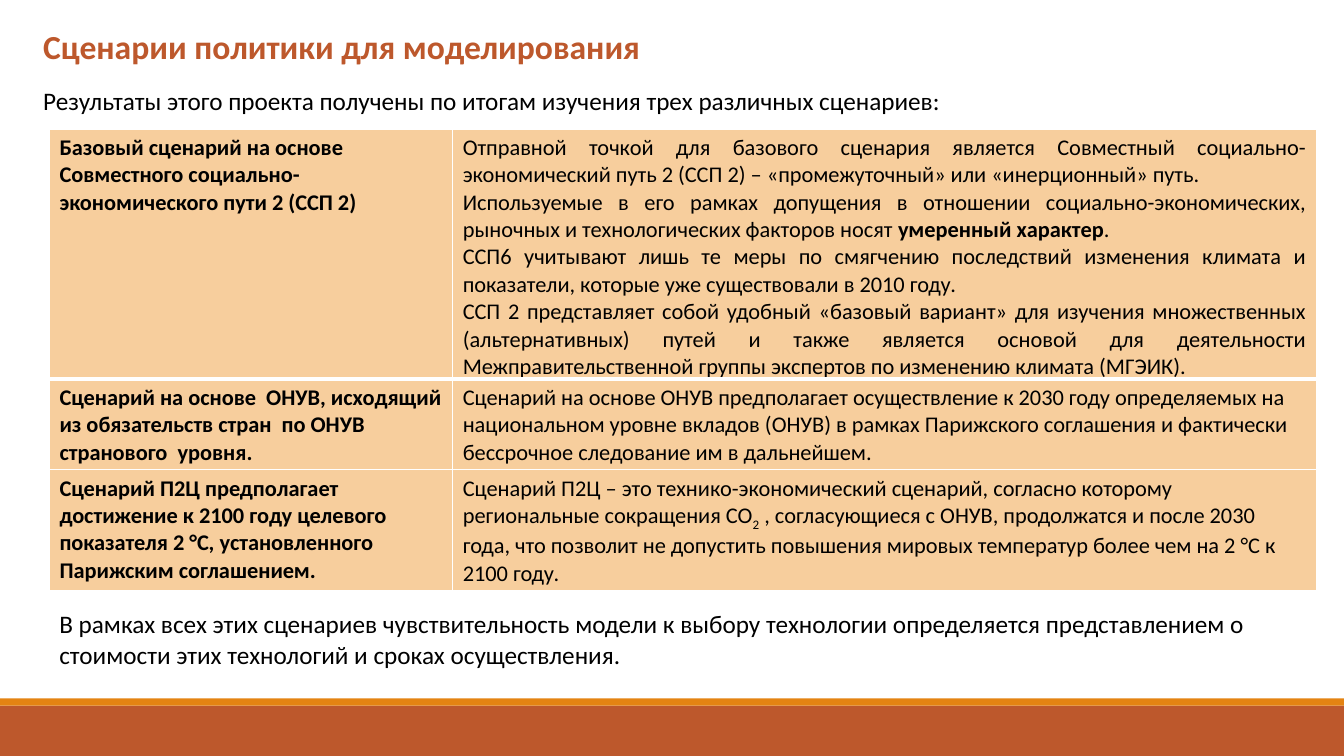
from dataclasses import dataclass

from lxml import etree
from pptx import Presentation
from pptx.dml.color import RGBColor
from pptx.enum.shapes import MSO_SHAPE as Shape
from pptx.enum.text import MSO_ANCHOR as Anchor, PP_ALIGN as Align
from pptx.oxml.ns import qn
from pptx.util import Inches, Pt


@dataclass(frozen=True)
class Theme:
    font: str = "Calibri"
    rust: str = "BD582C"
    orange: str = "E48312"
    peach: str = "F7CE9D"
    black: str = "000000"
    white: str = "FFFFFF"
    title_size: int = 24
    body_size: int = 18
    table_size: int = 16


THEME = Theme()
PLAIN, BOLD, SUBSCRIPT = "plain", "bold", "subscript"

TITLE = "Сценарии политики для моделирования"
INTRO = "Результаты этого проекта получены по итогам изучения трех различных сценариев:"
CLOSING = (
    "В рамках всех этих сценариев чувствительность модели к выбору технологии "
    "определяется представлением о стоимости этих технологий и сроках осуществления."
)

SCENARIOS = [
    (
        "Базовый сценарий на основе Совместного социально-экономического пути 2 (ССП 2)",
        [
            [("Отправной точкой для базового сценария является Совместный "
              "социально-экономический путь 2 (ССП 2) – «промежуточный» или "
              "«инерционный» путь.", PLAIN)],
            [("Используемые в его рамках допущения в отношении социально-экономических, "
              "рыночных и технологических факторов носят ", PLAIN),
             ("умеренный характер", BOLD), (".", PLAIN)],
            [("ССП6 учитывают лишь те меры по смягчению последствий изменения климата и "
              "показатели, которые уже существовали в 2010 году.", PLAIN)],
            [("ССП 2 представляет собой удобный «базовый вариант» для изучения "
              "множественных (альтернативных) путей и также является основой для "
              "деятельности Межправительственной группы экспертов по изменению климата "
              "(МГЭИК).", PLAIN)],
        ],
        {"height": 2.48, "align": Align.JUSTIFY, "margin_bottom": 0, "rule": 3},
    ),
    (
        "Сценарий на основе  ОНУВ, исходящий из обязательств стран  по ОНУВ "
        "странового  уровня.",
        [
            [("Сценарий на основе ОНУВ предполагает осуществление к 2030 году "
              "определяемых на национальном уровне вкладов (ОНУВ) в рамках Парижского "
              "соглашения и фактически бессрочное следование им в дальнейшем.", PLAIN)],
        ],
        {"height": 0.9, "align": Align.LEFT, "margin_bottom": 0.05, "rule": 1},
    ),
    (
        "Сценарий П2Ц предполагает достижение к 2100 году целевого показателя 2 °C, "
        "установленного Парижским соглашением.",
        [
            [("Сценарий П2Ц – это технико-экономический сценарий, согласно которому "
              "региональные сокращения CO", PLAIN), ("2", SUBSCRIPT),
             (" , согласующиеся с ОНУВ, продолжатся и после 2030 года, что позволит не "
              "допустить повышения мировых температур более чем на 2 °C к 2100 году.",
              PLAIN)],
        ],
        {"height": 1.19, "align": Align.LEFT, "margin_bottom": 0.05, "rule": 1},
    ),
]


def apply(target, values):
    for name, value in values.items():
        setattr(target, name, value)


def paint(fill, color):
    fill.solid()
    fill.fore_color.rgb = RGBColor.from_string(color)


def add_span(para, text, size, color=THEME.black, style=PLAIN):
    span = para.add_run()
    span.text = text
    apply(span.font, {"name": THEME.font, "size": Pt(size), "bold": style == BOLD})
    span.font.color.rgb = RGBColor.from_string(color)
    if style == SUBSCRIPT:
        span._r.get_or_add_rPr().set("baseline", "-25000")


def add_text(page, box, text, size, color=THEME.black, style=PLAIN, wrap=True):
    frame = page.shapes.add_textbox(*map(Inches, box)).text_frame
    frame.word_wrap = wrap
    add_span(frame.paragraphs[0], text, size, color, style)


def add_footer(page, box):
    left, top, width, height = box
    stripe = 0.07
    bands = [
        (top + stripe, height - stripe, THEME.rust),
        (top, stripe, THEME.orange),
    ]
    for band_top, band_height, color in bands:
        area = map(Inches, (left, band_top, width, band_height))
        band = page.shapes.add_shape(Shape.RECTANGLE, *area)
        band.shadow.inherit = False
        band.line.fill.background()
        paint(band.fill, color)


def set_borders(cell, widths):
    props = cell._tc.get_or_add_tcPr()
    for index, (side, width) in enumerate(widths.items()):
        line = etree.Element(qn(f"a:{side}"), w=str(Pt(width)))
        fill = etree.SubElement(line, qn("a:solidFill"))
        etree.SubElement(fill, qn("a:srgbClr"), val=THEME.white)
        props.insert(index, line)


def fill_cell(cell, paragraphs, align, margin_bottom, borders):
    apply(cell, {
        "vertical_anchor": Anchor.TOP,
        "margin_left": Inches(0.1),
        "margin_right": Inches(0.1),
        "margin_top": Inches(0.05),
        "margin_bottom": Inches(margin_bottom),
    })
    paint(cell.fill, THEME.peach)
    set_borders(cell, borders)
    frame = cell.text_frame
    for index, spans in enumerate(paragraphs):
        para = frame.add_paragraph() if index else frame.paragraphs[0]
        para.alignment = align
        for text, style in spans:
            add_span(para, text, THEME.table_size, style=style)


def add_scenarios(page, box):
    left, top, width, height = box
    area = map(Inches, box)
    table = page.shapes.add_table(len(SCENARIOS), 2, *area).table
    apply(table, {"first_row": False, "horz_banding": False})
    name_width = 4
    for column, size in zip(table.columns, (name_width, width - name_width)):
        column.width = Inches(size)
    rule_above = 1
    for row, (name, details, layout) in zip(table.rows, SCENARIOS):
        row.height = Inches(layout["height"])
        borders = {"lnL": 1, "lnR": 1, "lnT": rule_above, "lnB": layout["rule"]}
        contents = [
            ([[(name, BOLD)]], Align.LEFT),
            (details, layout["align"]),
        ]
        for cell, (paragraphs, align) in zip(row.cells, contents):
            fill_cell(cell, paragraphs, align, layout["margin_bottom"], borders)
        rule_above = layout["rule"]


def add_scenario_slide(deck):
    page = deck.slides.add_slide(deck.slide_layouts[6])
    paint(page.background.fill, THEME.white)
    add_footer(page, (0, 6.93, 13.33, 0.57))
    add_text(page, (0.33, 0.21, 6.17, 0.5), TITLE, THEME.title_size,
             THEME.rust, BOLD, wrap=False)
    add_text(page, (0.33, 0.8, 10.11, 0.4), INTRO, THEME.body_size)
    add_scenarios(page, (0.49, 1.28, 12.57, 4.57))
    add_text(page, (0.49, 5.99, 12.57, 0.71), CLOSING, THEME.body_size)


def main():
    deck = Presentation()
    apply(deck, {"slide_width": Inches(13.33), "slide_height": Inches(7.5)})
    add_scenario_slide(deck)
    deck.save("out.pptx")


if __name__ == "__main__":
    main()
